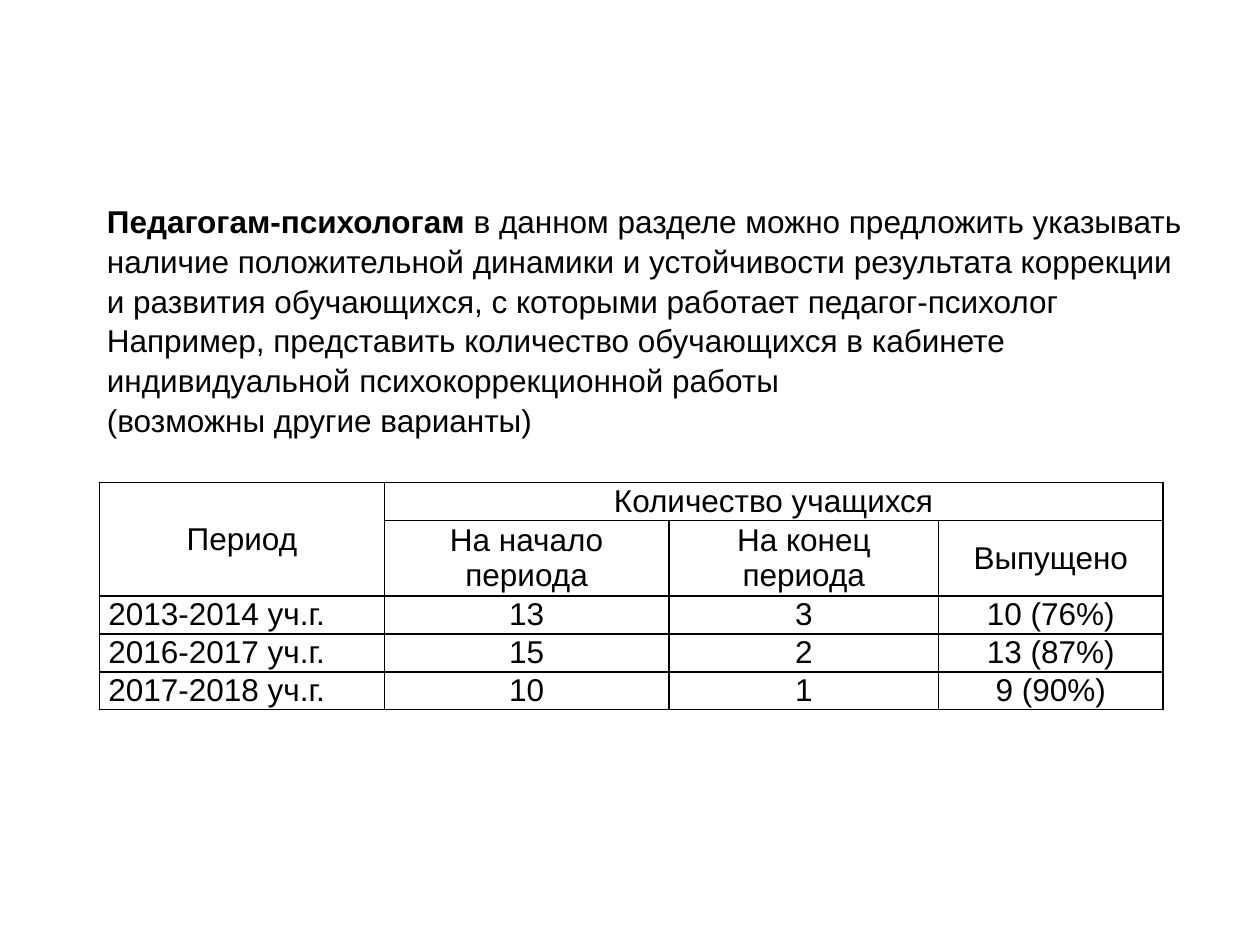
from lxml import etree
from pptx import Presentation
from pptx.dml.color import RGBColor
from pptx.enum.text import MSO_ANCHOR, PP_ALIGN
from pptx.oxml.ns import qn
from pptx.util import Inches, Pt

CENTER, LEFT = PP_ALIGN.CENTER, PP_ALIGN.LEFT
MIDDLE = MSO_ANCHOR.MIDDLE
COLORS = {"text": "000000", "border": "000000"}

INTRO = [
    [("Педагогам-психологам", True),
     (" в данном разделе можно предложить указывать наличие положительной "
      "динамики и устойчивости результата коррекции и развития обучающихся, "
      "с которыми работает педагог-психолог", False)],
    [("Например, представить количество обучающихся в кабинете "
      "индивидуальной психокоррекционной работы", False)],
    [("(возможны другие варианты)", False)],
]
ROWS = [
    ["Период", "Количество учащихся", "", ""],
    ["", "На начало периода", "На конец периода", "Выпущено"],
    ["2013-2014 уч.г.", "13", "3", "10 (76%)"],
    ["2016-2017 уч.г.", "15", "2", "13 (87%)"],
    ["2017-2018 уч.г.", "10", "1", "9 (90%)"],
]
COLUMN_WIDTHS = [2.26, 2.26, 2.14, 1.78]
ROW_HEIGHTS = [0.3, 0.6, 0.3, 0.3, 0.3]
HEADER_ROWS = 2


def add_span(para, text, bold=False):
    span = para.add_run()
    span.text = text
    span.font.name = "Arial"
    span.font.size = Pt(18)
    span.font.bold = bold
    span.font.color.rgb = RGBColor.from_string(COLORS["text"])


def add_borders(cell):
    """Draw a thin line on all four sides; borders must precede the fill."""
    properties = cell._tc.get_or_add_tcPr()
    for index, side in enumerate(("a:lnL", "a:lnR", "a:lnT", "a:lnB")):
        line = etree.Element(qn(side), w=str(Pt(1)))
        fill = etree.SubElement(line, qn("a:solidFill"))
        etree.SubElement(fill, qn("a:srgbClr"), val=COLORS["border"])
        properties.insert(index, line)


deck = Presentation()
deck.slide_width, deck.slide_height = Inches(10), Inches(7.5)
page = deck.slides.add_slide(deck.slide_layouts[6])

box = page.shapes.add_textbox(Inches(0.75), Inches(1.54), Inches(8.82), Inches(1.92))
frame = box.text_frame
frame.word_wrap = True
for index, spans in enumerate(INTRO):
    para = frame.add_paragraph() if index else frame.paragraphs[0]
    para.line_spacing = 1.05
    for text, bold in spans:
        add_span(para, text, bold)

table = page.shapes.add_table(
    len(ROWS), len(COLUMN_WIDTHS), Inches(0.79), Inches(3.83),
    Inches(sum(COLUMN_WIDTHS)), Inches(sum(ROW_HEIGHTS))).table
table.first_row = table.horz_banding = False
for column, width in zip(table.columns, COLUMN_WIDTHS):
    column.width = Inches(width)
for row, height in zip(table.rows, ROW_HEIGHTS):
    row.height = Inches(height)

table.cell(0, 0).merge(table.cell(1, 0))
table.cell(0, 1).merge(table.cell(0, 3))
for r, texts in enumerate(ROWS):
    for c, text in enumerate(texts):
        cell = table.cell(r, c)
        cell.fill.background()
        add_borders(cell)
        cell.vertical_anchor = MIDDLE
        cell.margin_left = cell.margin_right = Inches(0.07)
        cell.margin_top = cell.margin_bottom = 0
        if text:
            para = cell.text_frame.paragraphs[0]
            para.alignment = LEFT if c == 0 and r >= HEADER_ROWS else CENTER
            add_span(para, text)

deck.save("out.pptx")
